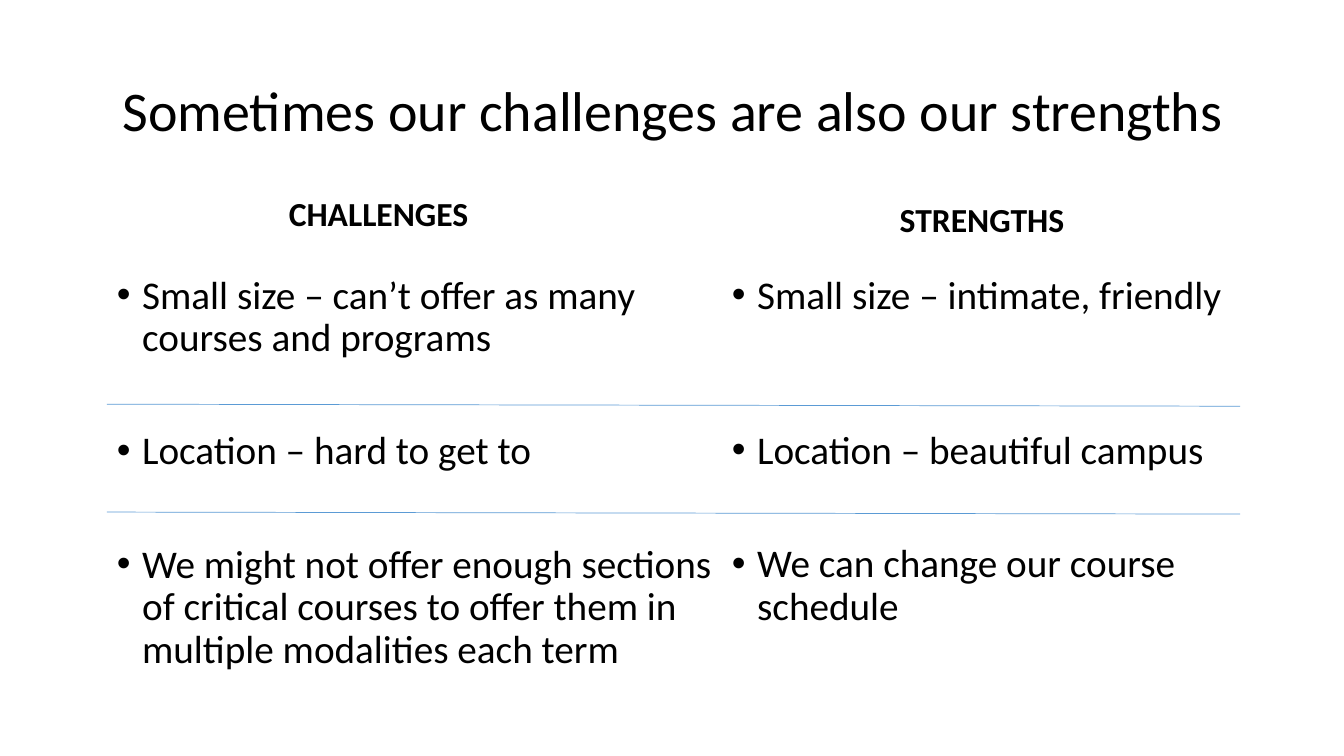
from pptx import Presentation
from pptx.dml.color import RGBColor
from pptx.enum import shapes, text
from pptx.oxml.ns import qn
from pptx.util import Inches, Pt

COLORS = {"text": "000000", "divider": "5B9BD5"}
FONT = "Calibri"
COMPARISON_LAYOUT = 4
ROW_GAP = 50.8

# Heading index, heading box, list index, list box, heading, (item, space before)
COLUMNS = [
    (1, (0.92, 1.61, 5.67, 0.76), 2, (1.06, 2.68, 6.1, 4.57), "CHALLENGES", [
        ("Small size – can’t offer as many courses and programs", 10),
        ("Location – hard to get to", ROW_GAP),
        ("We might not offer enough sections of critical courses to offer them "
         "in multiple modalities each term", ROW_GAP),
    ]),
    (3, (6.92, 1.67, 5.64, 0.76), 4, (7.16, 2.68, 5.64, 4.03), "STRENGTHS", [
        ("Small size – intimate, friendly", 10),
        ("Location – beautiful campus", 80.6),
        ("We can change our course schedule", ROW_GAP),
    ]),
]


def place(shape, box, anchor):
    shape.left, shape.top, shape.width, shape.height = map(Inches, box)
    frame = shape.text_frame
    frame.word_wrap = True
    frame.auto_size = text.MSO_AUTO_SIZE.NONE
    frame.vertical_anchor = anchor
    return frame


def format_paragraph(paragraph, size, align, space_before=0, bold=False):
    paragraph.alignment = align
    paragraph.line_spacing = 0.9
    paragraph.space_before = Pt(space_before)
    for run in paragraph.runs:
        run.font.name = FONT
        run.font.size = Pt(size)
        run.font.bold = bold
        run.font.color.rgb = RGBColor.from_string(COLORS["text"])


def fill_heading(shape, box, wording, size, anchor, space_before=0, bold=False):
    frame = place(shape, box, anchor)
    frame.text = wording
    format_paragraph(frame.paragraphs[0], size, text.PP_ALIGN.CENTER, space_before, bold)


def fill_list(shape, box, items):
    frame = place(shape, box, text.MSO_ANCHOR.TOP)
    frame.text = "\n".join(wording for wording, _ in items)
    for paragraph, (_, space_before) in zip(frame.paragraphs, items):
        format_paragraph(paragraph, 28, text.PP_ALIGN.LEFT, space_before)
        properties = paragraph._p.get_or_add_pPr()
        properties.set("marL", str(Inches(0.25)))
        properties.set("indent", str(Inches(-0.25)))


def add_divider(slide, top):
    line = slide.shapes.add_connector(
        shapes.MSO_CONNECTOR.STRAIGHT,
        Inches(1.06), Inches(top), Inches(12.3), Inches(top + 0.02))
    line.line.color.rgb = RGBColor.from_string(COLORS["divider"])
    line.line.width = Pt(0.5)
    properties = line._element.spPr
    properties.append(properties.makeelement(qn("a:effectLst"), {}))


def main():
    presentation = Presentation()
    presentation.slide_width = Inches(13.33)
    presentation.slide_height = Inches(7.5)
    slide = presentation.slides.add_slide(presentation.slide_layouts[COMPARISON_LAYOUT])

    fill_heading(slide.shapes.title, (0.92, 0.4, 11.5, 1.45),
                 "Sometimes our challenges are also our strengths", 40,
                 text.MSO_ANCHOR.MIDDLE)
    placeholders = slide.placeholders
    for heading_index, heading_box, list_index, list_box, heading, items in COLUMNS:
        fill_heading(placeholders[heading_index], heading_box, heading, 24,
                     text.MSO_ANCHOR.BOTTOM, space_before=10, bold=True)
        fill_list(placeholders[list_index], list_box, items)
    for top in (4.01, 5.08):
        add_divider(slide, top)

    presentation.save("out.pptx")


if __name__ == "__main__":
    main()
